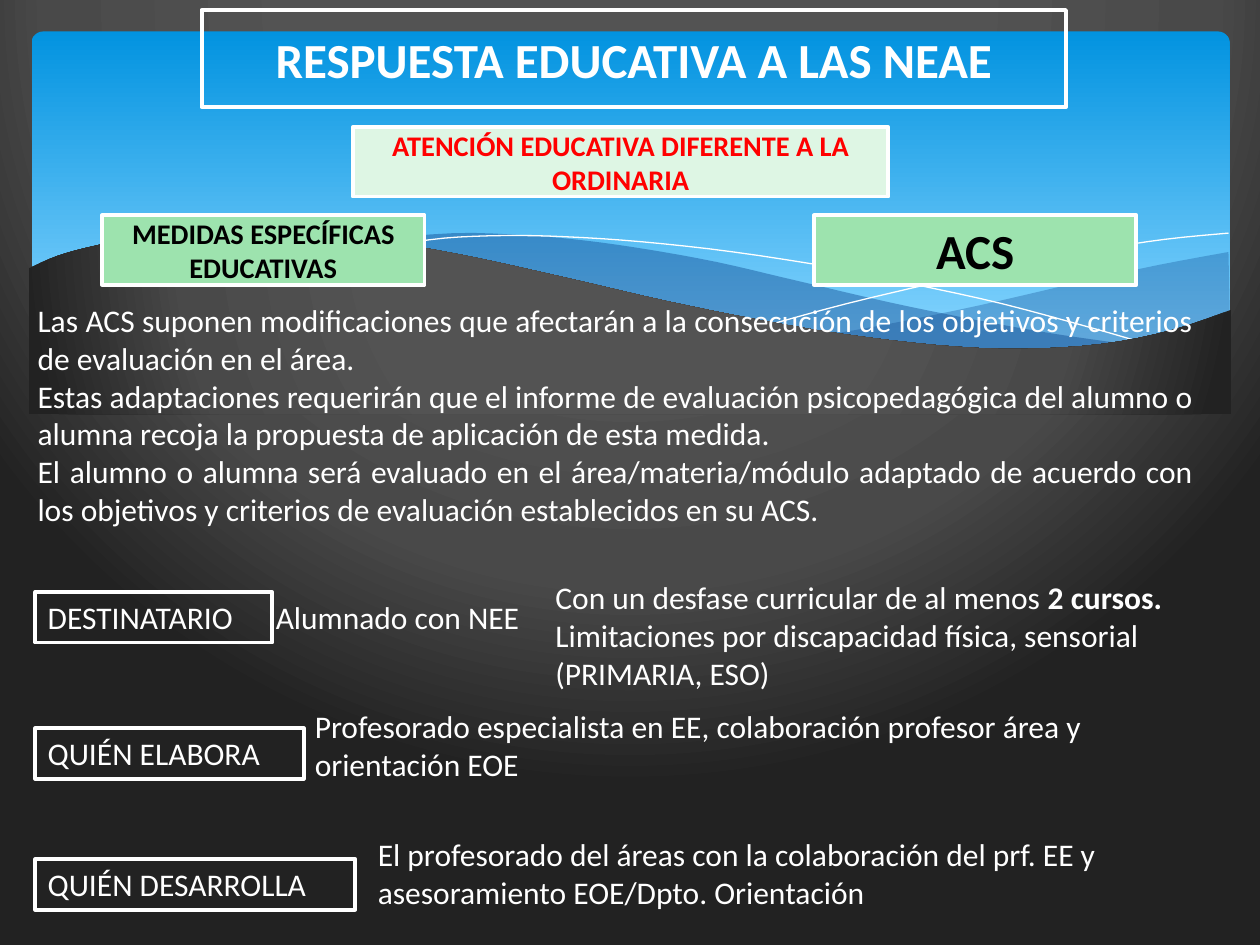
from lxml import etree
from pptx import Presentation
from pptx.dml.color import RGBColor
from pptx.enum.shapes import MSO_SHAPE
from pptx.enum.text import MSO_ANCHOR, MSO_AUTO_SIZE, PP_ALIGN
from pptx.oxml import parse_xml
from pptx.oxml.ns import nsdecls, qn
from pptx.util import Inches, Pt

COLUMNS, ROWS = 100, 75
WIDTH, HEIGHT = Inches(10), Inches(7.5)
COLORS = {
    "white": "FFFFFF", "black": "000000", "red": "FF0000",
    "pale_green": "DEF6E4", "green": "9DE3AE", "navy": "073E87",
    "sky": "0293E0", "light_sky": "83D3FE",
    "gray": "535353", "mid_gray": "494949", "dark_gray": "222222",
}
SKY_STOPS = [(0, "sky"), (90, "light_sky")]
GRAY_STOPS = [(40, "gray"), (74, "mid_gray"), (100, "dark_gray")]
LINEAR = '<a:lin ang="5400000" scaled="0"/>'
CIRCLE = ('<a:path path="circle"><a:fillToRect l="20000" t="-40000" '
          'r="20000" b="140000"/></a:path>')

# Key points of the waves, in grid columns and rows
RIGHT_TOP = [(97.5, 20), (92.1, 21), (86.1, 22.3), (77.9, 24.2), (70.6, 25.7), (66.1, 26.5)]
RIGHT_BOTTOM = [(66.1, 26.5), (70.5, 27.1), (75.7, 27.6), (80.3, 27.8), (85.4, 27.6),
                (90.5, 26.9), (94.2, 25.9), (97.6, 24.7)]
MIDDLE_TOP = [(89.3, 27.3), (83.7, 26.5), (77.5, 25.4), (70.6, 24), (62.9, 22.2), (56.9, 20.8),
              (51.4, 19.8), (46.5, 19.1), (42, 18.7), (36.1, 18.5), (28.6, 19.1)]
MIDDLE_BOTTOM = [(28.6, 19.1), (34.2, 19.9), (40.4, 21.1), (44.9, 22.2), (53, 24), (60.1, 25.5),
                 (66.5, 26.6), (72.2, 27.4), (78.5, 27.8), (83.8, 27.8), (89.3, 27.3)]
LONG_LINE = [(30.9, 19.5), (35.3, 18.9), (40.1, 18.7), (45, 18.8), (51, 19.2), (58.2, 20),
             (66.5, 21.3), (72.7, 22.6), (79.5, 24.1), (86.9, 26.1), (90.7, 27.2)]
SHORT_LINE = [(61.3, 25.7), (67.2, 24.1), (74.8, 22.3), (80.6, 21), (86.6, 19.9),
              (92.4, 19), (97.5, 18.5)]
FRONT_WAVE = [(97.7, 24.6), (93, 26.2), (87.5, 27.3), (80.9, 27.7), (74.4, 27.4), (66.8, 26.5),
              (60.3, 25.4), (52.9, 23.9), (44.7, 22), (36.5, 20.2), (29.2, 19), (23, 18.5),
              (17.7, 18.4), (11.9, 18.7), (7.6, 19.5), (4.6, 20.3), (2.3, 21.3)]

BODY = {"size": 18}
JUSTIFIED = {"size": 18, "align": PP_ALIGN.JUSTIFY}
HEADING = {"size": 28, "align": PP_ALIGN.CENTER, "bold": True, "middle": True}
SUBHEADING = {**HEADING, "size": 16.2}


def color(name):
    return RGBColor.from_string(COLORS[name])


def place(column, row):
    return round(column * WIDTH / COLUMNS), round(row * HEIGHT / ROWS)


def set_gradient(fill, element, stops, shade):
    fill.gradient()
    default = next(element.iter(qn("a:gradFill")))
    marks = "".join(f'<a:gs pos="{share * 1000}"><a:srgbClr val="{COLORS[name]}"/></a:gs>'
                    for share, name in stops)
    gradient = parse_xml(f'<a:gradFill {nsdecls("a")} rotWithShape="1">'
                         f'<a:gsLst>{marks}</a:gsLst>{shade}</a:gradFill>')
    default.getparent().replace(default, gradient)


def curve(points, steps=4):
    """Return points along a Catmull-Rom spline through the key points."""
    padded = [points[0], *points, points[-1]]
    result = [points[0]]
    for a, b, c, d in zip(padded, padded[1:], padded[2:], padded[3:]):
        for step in range(1, steps + 1):
            t = step / steps
            result.append(tuple(
                (2 * q + (r - p) * t + (2 * p - 5 * q + 4 * r - s) * t ** 2
                 + (3 * q - p - 3 * r + s) * t ** 3) / 2
                for p, q, r, s in zip(a, b, c, d)))
    return result


def add_outline(slide, points, closed=True):
    corners = [place(*point) for point in points]
    builder = slide.shapes.build_freeform(*corners[0], scale=1.0)
    builder.add_line_segments(corners[1:], close=closed)
    shape = builder.convert_to_shape()
    shape.shadow.inherit = False
    return shape


def add_band(slide, top, bottom, opacity):
    shape = add_outline(slide, curve(top) + curve(bottom))
    shape.line.fill.background()
    shape.fill.solid()
    shape.fill.fore_color.rgb = color("navy")
    tint = next(shape.fill.fore_color.rgb and shape.element.iter(qn("a:srgbClr")))
    etree.SubElement(tint, qn("a:alpha")).set("val", str(opacity * 1000))


def add_hairline(slide, points):
    shape = add_outline(slide, curve(points), closed=False)
    shape.fill.background()
    shape.line.color.rgb = color("white")
    shape.line.width = 0


def add_backdrop(slide):
    set_gradient(slide.background.fill, slide.element, GRAY_STOPS, CIRCLE)
    panel = slide.shapes.add_shape(MSO_SHAPE.ROUNDED_RECTANGLE,
                                   *place(2.5, 2.5), *place(95.1, 27))
    panel.adjustments[0] = 0.034
    panel.shadow.inherit = False
    panel.line.fill.background()
    set_gradient(panel.fill, panel.element, SKY_STOPS, LINEAR)
    add_band(slide, RIGHT_TOP, RIGHT_BOTTOM, 29)
    add_band(slide, MIDDLE_TOP, MIDDLE_BOTTOM, 40)
    for points in (LONG_LINE, SHORT_LINE):
        add_hairline(slide, points)
    front = add_outline(slide, curve(FRONT_WAVE) + [(2.3, 32.9), (97.7, 32.9)])
    front.line.fill.background()
    set_gradient(front.fill, front.element, GRAY_STOPS, CIRCLE)


def write(shape, lines, style, ink="white"):
    """Write one paragraph per line; words between asterisks are bold."""
    frame = shape.text_frame
    middle = style.get("middle", False)
    settings = {
        "word_wrap": True,
        "vertical_anchor": MSO_ANCHOR.MIDDLE if middle else MSO_ANCHOR.TOP,
        "auto_size": MSO_AUTO_SIZE.NONE if middle else MSO_AUTO_SIZE.SHAPE_TO_FIT_TEXT,
    }
    for name, value in settings.items():
        setattr(frame, name, value)
    for index, line in enumerate(lines):
        paragraph = frame.paragraphs[0] if index == 0 else frame.add_paragraph()
        paragraph.alignment = style.get("align", PP_ALIGN.LEFT)
        for part, text in enumerate(line.split("*")):
            if not text:
                continue
            run = paragraph.add_run()
            run.text = text
            font = {"name": "Calibri", "size": Pt(style["size"]),
                    "bold": style.get("bold", part % 2 == 1)}
            for name, value in font.items():
                setattr(run.font, name, value)
            run.font.color.rgb = color(ink)


def add_box(slide, area, lines, style, fill=None, ink="white"):
    shape = slide.shapes.add_shape(MSO_SHAPE.RECTANGLE, *place(*area[:2]), *place(*area[2:]))
    shape.shadow.inherit = False
    if fill:
        shape.fill.solid()
        shape.fill.fore_color.rgb = color(fill)
    else:
        shape.fill.background()
    shape.line.color.rgb = color("white")
    shape.line.width = Pt(2.25)
    write(shape, lines, style, ink)


def add_text(slide, area, lines, style):
    write(slide.shapes.add_textbox(*place(*area[:2]), *place(*area[2:])), lines, style)


def main():
    presentation = Presentation()
    presentation.slide_width, presentation.slide_height = WIDTH, HEIGHT
    slide = presentation.slides.add_slide(presentation.slide_layouts[6])
    add_backdrop(slide)

    add_box(slide, (16, 0.8, 68.6, 7.7), ["RESPUESTA EDUCATIVA A LAS NEAE"], HEADING)
    add_box(slide, (28, 10.1, 42.5, 5.5), ["ATENCIÓN EDUCATIVA DIFERENTE A LA ORDINARIA"],
            SUBHEADING, "pale_green", "red")
    add_box(slide, (8.1, 17.1, 25.6, 5.5), ["MEDIDAS ESPECÍFICAS", "EDUCATIVAS"],
            SUBHEADING, "green", "black")
    add_box(slide, (64.6, 17.1, 25.6, 5.5), ["ACS"], HEADING, "green", "black")

    for row, width, label in [(47, 18.8, "DESTINATARIO"), (57.8, 21.3, "QUIÉN ELABORA"),
                              (68.2, 25.4, "QUIÉN DESARROLLA")]:
        add_box(slide, (2.8, row, width, 4), [label], BODY)

    add_text(slide, (20.9, 47, 31.8, 4), ["Alumnado con NEE"], BODY)
    add_text(slide, (29, 65.8, 69.8, 7.1),
             ["El profesorado del áreas con la colaboración del prf. EE y",
              "asesoramiento EOE/Dpto. Orientación"], BODY)
    add_text(slide, (43.1, 45.4, 58, 10.1),
             ["Con un desfase curricular de al menos *2 cursos.*",
              "Limitaciones por discapacidad física, sensorial", "(PRIMARIA, ESO)"], JUSTIFIED)
    add_text(slide, (24, 55.6, 78, 7.1),
             ["Profesorado especialista en EE, colaboración profesor área y",
              "orientación EOE"], JUSTIFIED)
    add_text(slide, (2, 23.4, 93.7, 19.2), [
        "Las ACS suponen modificaciones que afectarán a la consecución de los objetivos y "
        "criterios de evaluación en el área.",
        "Estas adaptaciones requerirán que el informe de evaluación psicopedagógica del alumno "
        "o alumna recoja la propuesta de aplicación de esta medida.",
        "El alumno o alumna será evaluado en el área/materia/módulo adaptado de acuerdo con "
        "los objetivos y criterios de evaluación establecidos en su ACS."], JUSTIFIED)
    presentation.save("out.pptx")


if __name__ == "__main__":
    main()
